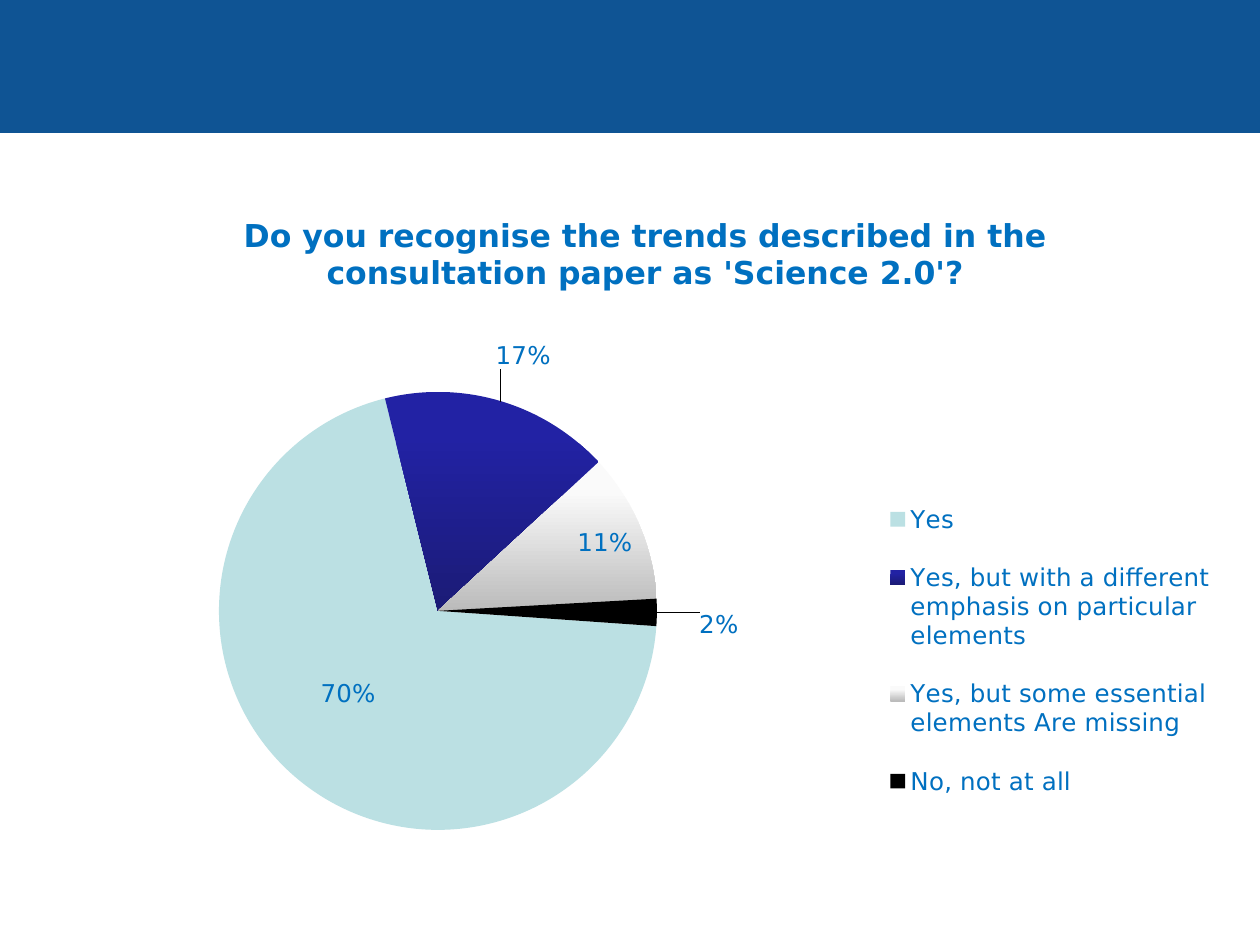
from lxml import etree
from pptx import Presentation
from pptx.chart.data import CategoryChartData
from pptx.dml.color import RGBColor
from pptx.enum import chart as ch, shapes
from pptx.oxml.ns import qn
from pptx.util import Pt

FONT = "DejaVu Sans"
TEXT = "0070C0"
BANNER = "0F5494"
TITLE = "Do you recognise the trends described in the consultation paper as 'Science 2.0'?"
ANSWERS = [
    ("Yes", 70, ("BBE0E3", "BBE0E3")),
    ("Yes, but with a different emphasis on particular elements", 17, ("2222A4", "1B1B76")),
    ("Yes, but some essential elements Are missing", 11, ("FAFAFA", "BBBBBB")),
    ("No, not at all", 2, ("000000", "000000")),
]
POS = ch.XL_LABEL_POSITION
MOVED_LABELS = {
    0: (POS.CENTER, -11, -1),
    1: (POS.OUTSIDE_END, -4, -14),
    3: (POS.OUTSIDE_END, 20, 7),
}


def rgb(value):
    """Return the colour for a hex string."""
    return RGBColor.from_string(value)


def style(font, size, bold=False):
    """Apply the slide's typeface and text colour."""
    font.name, font.size, font.bold = FONT, Pt(size), bold
    font.color.rgb = rgb(TEXT)


def place(parent, index, size, **lengths):
    """Give a chart part a manual layout, in points relative to the chart size."""
    for old in parent.findall(qn("c:layout")):
        parent.remove(old)
    layout = etree.Element(qn("c:layout"))
    manual = etree.SubElement(layout, qn("c:manualLayout"))

    def add(tag, val):
        etree.SubElement(manual, qn(f"c:{tag}")).set("val", str(val))

    if parent.tag == qn("c:plotArea"):
        add("layoutTarget", "inner")
    if parent.tag != qn("c:dLbl"):
        add("xMode", "edge")
        add("yMode", "edge")
    for key, length in lengths.items():
        add(key, round(length / size[key in "yh"], 4))
    parent.insert(index, layout)


def fill_slice(fill, top, bottom):
    """Fill a slice with one colour or a downward gradient."""
    if top == bottom:
        fill.solid()
        fill.fore_color.rgb = rgb(top)
        return
    fill.gradient()
    fill.gradient_angle = 270
    for stop, colour, at in zip(fill.gradient_stops, (top, bottom), (0.2, 1)):
        stop.color.rgb = rgb(colour)
        stop.position = at


def add_labels(series, size):
    """Show percentages and move the labels that need it."""
    labels = series.data_labels
    labels.show_percentage, labels.show_value = True, False
    labels.number_format, labels.number_format_is_linked = "0%", False
    labels.position = POS.INSIDE_END
    style(labels.font, 14)
    for i, (position, dx, dy) in MOVED_LABELS.items():
        label = series.points[i].data_label
        style(label.font, 14)
        label.position = position
    for d in labels._element.findall(qn("c:dLbl")):
        i = int(d.find(qn("c:idx")).get("val"))
        d.find(qn("c:showVal")).set("val", "0")
        d.find(qn("c:showPercent")).set("val", "1")
        place(d, 1, size, x=MOVED_LABELS[i][1], y=MOVED_LABELS[i][2])


def add_banner(s, x, y, w, h):
    """Draw the coloured band across the top."""
    sp = s.shapes.add_shape(shapes.MSO_SHAPE.RECTANGLE, Pt(x), Pt(y), Pt(w), Pt(h))
    sp.shadow.inherit = False
    sp.fill.solid()
    sp.fill.fore_color.rgb = rgb(BANNER)
    sp.line.color.rgb = rgb(BANNER)
    sp.line.width = Pt(0.75)


def add_pie(s, x, y, w, h):
    """Add the pie chart with its title, labels and legend."""
    size = (w, h)
    data = CategoryChartData()
    data.categories = [name for name, _, _ in ANSWERS]
    data.add_series("Series 1", [value for _, value, _ in ANSWERS])
    chart = s.shapes.add_chart(ch.XL_CHART_TYPE.PIE, Pt(x), Pt(y), Pt(w), Pt(h), data).chart
    style(chart.font, 14)

    chart.has_title = True
    title = chart.chart_title
    title.text_frame.text = TITLE
    style(title.text_frame.paragraphs[0].runs[0].font, 18, True)
    place(title._element, 1, size, x=121.6, y=8)

    chart.has_legend = True
    legend = chart.legend
    legend.position = ch.XL_LEGEND_POSITION.RIGHT
    legend.include_in_layout = False
    style(legend.font, 14)
    place(legend._element, 1, size, x=482.7, y=160, w=206, h=200)

    plot = chart.plots[0]
    plot.vary_by_categories = True
    series = plot.series[0]
    for i, (_, _, colours) in enumerate(ANSWERS):
        fill_slice(series.points[i].format.fill, *colours)
    add_labels(series, size)
    pie = plot._element
    for old in pie.findall(qn("c:firstSliceAng")):
        pie.remove(old)
    etree.SubElement(pie, qn("c:firstSliceAng")).set("val", "94")
    place(pie.getparent(), 0, size, x=110.7, y=112.4, w=250.3, h=250.3)


def main():
    """Build the slide and save it."""
    prs = Presentation()
    prs.slide_width, prs.slide_height = Pt(720), Pt(540)
    s = prs.slides.add_slide(prs.slide_layouts[6])
    add_banner(s, 0, 0, 720, 75.6)
    add_pie(s, 14.4, 111.6, 689, 378.7)
    prs.save("out.pptx")


if __name__ == "__main__":
    main()
